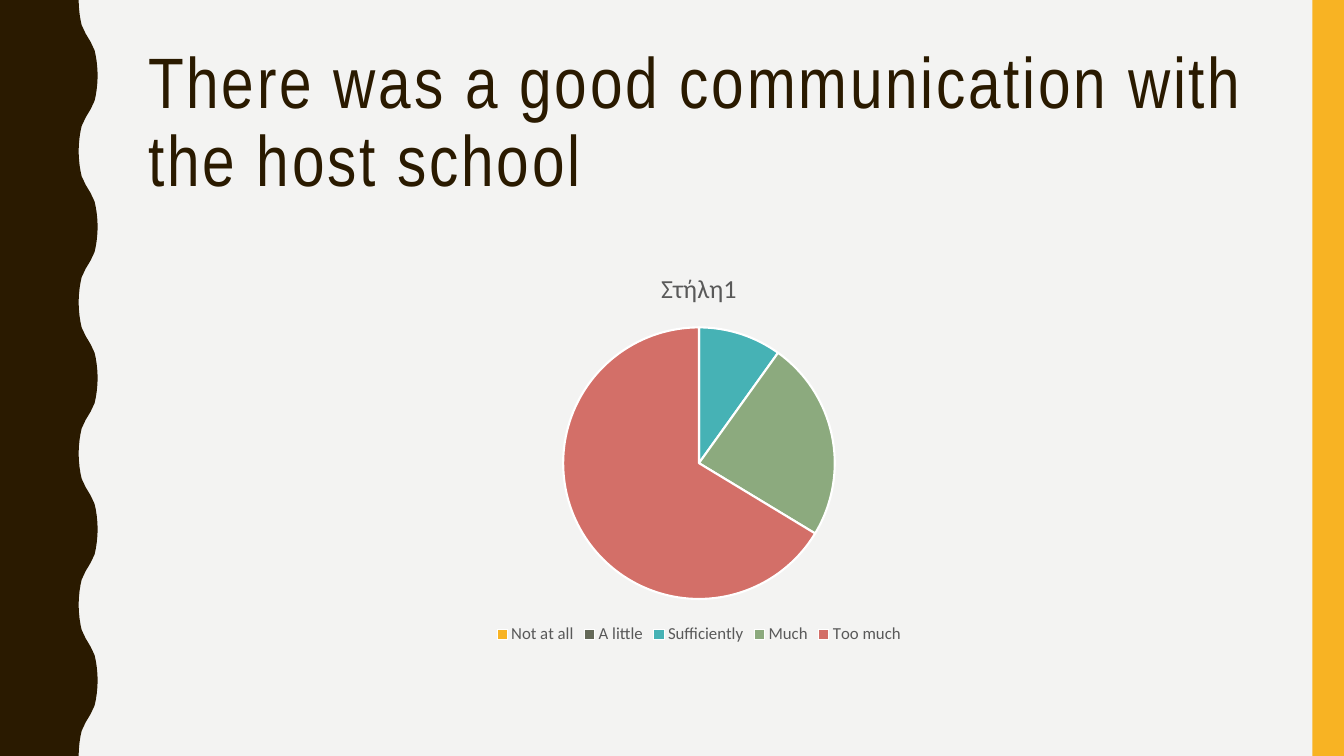
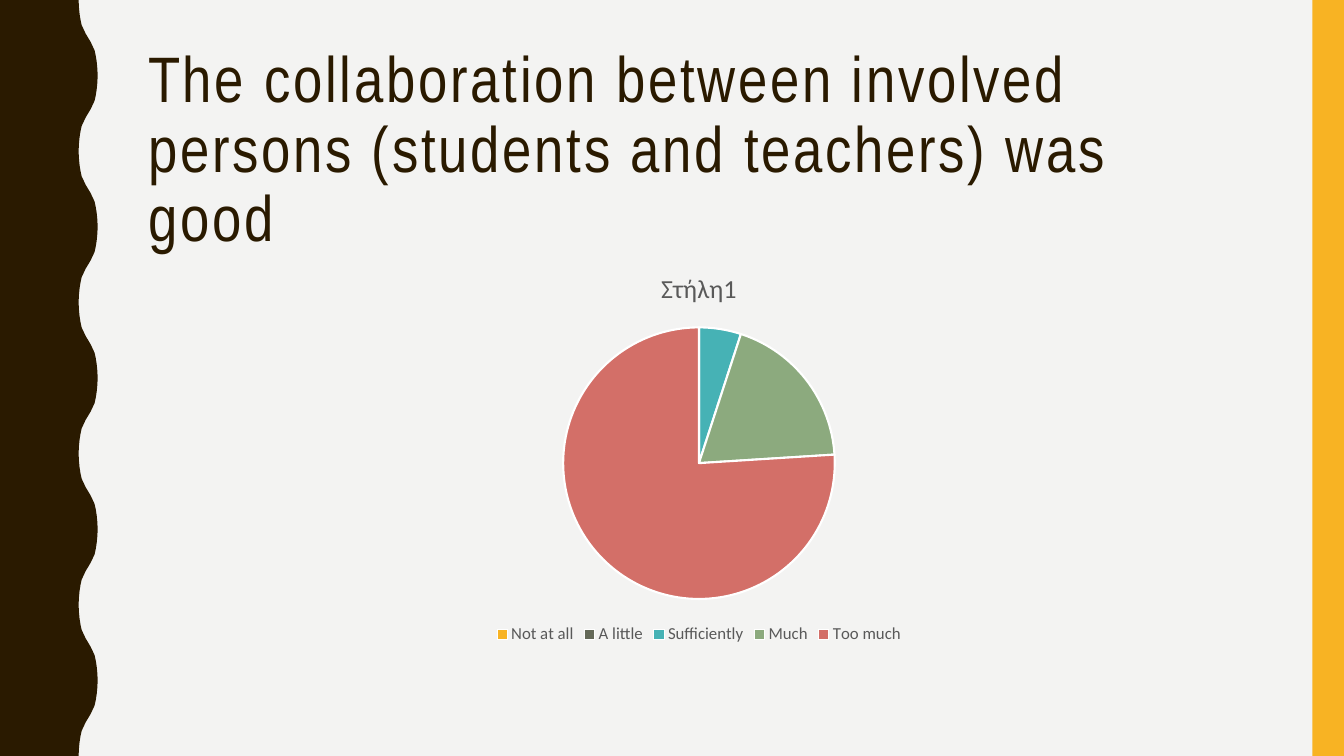
"""Build two survey result slides, each with a title and a pie chart."""
from dataclasses import dataclass

from pptx import Presentation
from pptx.chart.data import CategoryChartData
from pptx.dml.color import RGBColor
from pptx.dml.fill import FillFormat
from pptx.enum.chart import XL_CHART_TYPE, XL_LEGEND_POSITION
from pptx.enum.shapes import MSO_SHAPE
from pptx.enum.text import MSO_ANCHOR, MSO_AUTO_SIZE, PP_ALIGN
from pptx.shapes.base import BaseShape
from pptx.slide import Slide, SlideLayout
from pptx.text.text import Font
from pptx.util import Pt

SLIDE_WIDTH, SLIDE_HEIGHT = 960, 540
CONTENT_LEFT, CONTENT_WIDTH = 98.6, 801.4
TITLE_TOP, TITLE_HEIGHT = 30.2, 117.4
CHART_TOP, CHART_HEIGHT = 180, 283
BAR_WIDTH = 22.6

BACKGROUND, DARK, GOLD = "F3F3F2", "2A1A00", "F8B323"
GREY, BLACK, WHITE = "595959", "000000", "FFFFFF"
TITLE_FONT, CHART_FONT = "Arial Narrow", "Calibri"
LETTER_SPACING = 2

WAVE_LEFT, WAVE_DEPTH, WAVE_COUNT = 56.2, 13.6, 5
HALF_WAVE = SLIDE_HEIGHT / WAVE_COUNT / 2
QUARTER_WAVE = [(0, 0), (0.2, 5), (0.7, 10), (1.4, 14.4), (2.2, 18), (3.6, 21), (5, 24), (6.8, 27)]

SERIES_NAME = "Στήλη1"
ANSWER_COLOURS = {
    "Not at all": GOLD,
    "A little": "656A59",
    "Sufficiently": "46B2B5",
    "Much": "8CAA7E",
    "Too much": "D36F68",
}


@dataclass(frozen=True)
class Question:
    """A survey statement, its title size and the share of each answer."""

    title: str
    title_size: float
    shares: tuple[int, ...]


QUESTIONS = (
    Question("There was a good communication with the host school", 51, (0, 0, 10, 24, 67)),
    Question(
        "The collaboration between involved persons (students and teachers) was good",
        45.9,
        (0, 0, 5, 19, 76),
    ),
)


def paint(fill: FillFormat, colour: str) -> None:
    """Give a fill one solid colour."""
    fill.solid()
    fill.fore_color.rgb = RGBColor.from_string(colour)


def style_font(font: Font, name: str, size: float, colour: str) -> None:
    """Set the typeface, size and colour of a regular font."""
    font.name = name
    font.size = Pt(size)
    font.bold = False
    paint(font.fill, colour)


def wave_points() -> list[tuple[int, int]]:
    """Return the wavy edge from the top of the slide to the bottom."""
    mirrored = [(WAVE_DEPTH - out, HALF_WAVE - down) for out, down in reversed(QUARTER_WAVE[:-1])]
    points = []
    for half in range(2 * WAVE_COUNT):
        for out, down in QUARTER_WAVE + mirrored:
            offset = WAVE_DEPTH - out if half % 2 else out
            points.append((Pt(WAVE_LEFT + offset), Pt(half * HALF_WAVE + down)))
    return points


def move_to_layout(shape: BaseShape, layout: SlideLayout, colour: str) -> None:
    """Paint a flat band and hand it to the layout."""
    shape.shadow.inherit = False
    paint(shape.fill, colour)
    shape.line.fill.background()
    layout.shapes.element.append(shape.element)


def decorate_layout(layout: SlideLayout, slide: Slide) -> None:
    """Set the shared background, title frame and side bands."""
    paint(layout.background.fill, BACKGROUND)
    title = layout.placeholders[0]
    title.left, title.top = Pt(CONTENT_LEFT), Pt(TITLE_TOP)
    title.width, title.height = Pt(CONTENT_WIDTH), Pt(TITLE_HEIGHT)
    title.text_frame.vertical_anchor = MSO_ANCHOR.TOP
    title.text_frame.auto_size = MSO_AUTO_SIZE.NONE

    builder = slide.shapes.build_freeform(0, 0)
    builder.add_line_segments([*wave_points(), (0, Pt(SLIDE_HEIGHT))], close=True)
    move_to_layout(builder.convert_to_shape(), layout, DARK)
    bar = slide.shapes.add_shape(
        MSO_SHAPE.RECTANGLE, Pt(SLIDE_WIDTH - BAR_WIDTH), 0, Pt(BAR_WIDTH), Pt(SLIDE_HEIGHT)
    )
    move_to_layout(bar, layout, GOLD)


def add_title(slide: Slide, question: Question) -> None:
    """Write the statement in the title placeholder."""
    paragraph = slide.shapes.title.text_frame.paragraphs[0]
    paragraph.alignment = PP_ALIGN.LEFT
    paragraph.line_spacing = 0.9
    run = paragraph.add_run()
    run.text = question.title
    style_font(run.font, TITLE_FONT, question.title_size, DARK)
    run.font._element.set("spc", str(LETTER_SPACING * 100))


def add_pie(slide: Slide, question: Question) -> None:
    """Draw the shares of the answers as a pie chart."""
    data = CategoryChartData()
    data.categories = list(ANSWER_COLOURS)
    data.add_series(SERIES_NAME, question.shares)
    chart = slide.shapes.add_chart(
        XL_CHART_TYPE.PIE, Pt(CONTENT_LEFT), Pt(CHART_TOP), Pt(CONTENT_WIDTH), Pt(CHART_HEIGHT), data
    ).chart
    style_font(chart.font, CHART_FONT, 10, BLACK)

    chart.has_title = True
    run = chart.chart_title.text_frame.paragraphs[0].add_run()
    run.text = SERIES_NAME
    style_font(run.font, CHART_FONT, 18.6, GREY)
    chart.chart_title.include_in_layout = False

    chart.has_legend = True
    chart.legend.position = XL_LEGEND_POSITION.BOTTOM
    chart.legend.include_in_layout = False
    style_font(chart.legend.font, CHART_FONT, 12, GREY)

    plot = chart.plots[0]
    plot.vary_by_categories = True
    for index, colour in enumerate(ANSWER_COLOURS.values()):
        slice_format = plot.series[0].points[index].format
        paint(slice_format.fill, colour)
        paint(slice_format.line.fill, WHITE)
        slice_format.line.width = Pt(1.5)


def main() -> None:
    """Build and save the presentation."""
    presentation = Presentation()
    presentation.slide_width, presentation.slide_height = Pt(SLIDE_WIDTH), Pt(SLIDE_HEIGHT)
    layout = presentation.slide_layouts.get_by_name("Title Only")
    slides = [presentation.slides.add_slide(layout) for _ in QUESTIONS]
    decorate_layout(layout, slides[0])
    for slide, question in zip(slides, QUESTIONS):
        add_title(slide, question)
        add_pie(slide, question)
    presentation.save("out.pptx")


if __name__ == "__main__":
    main()
